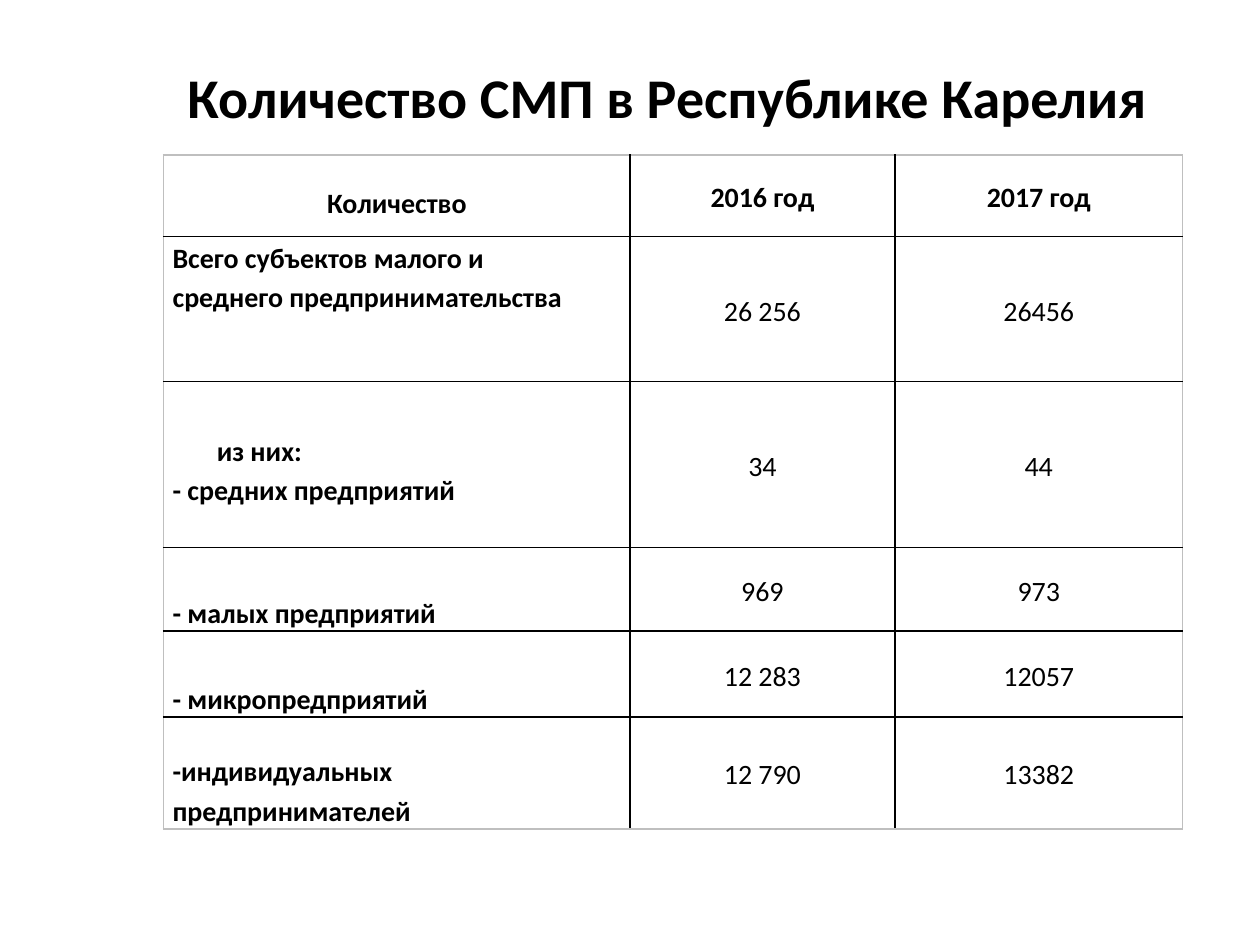
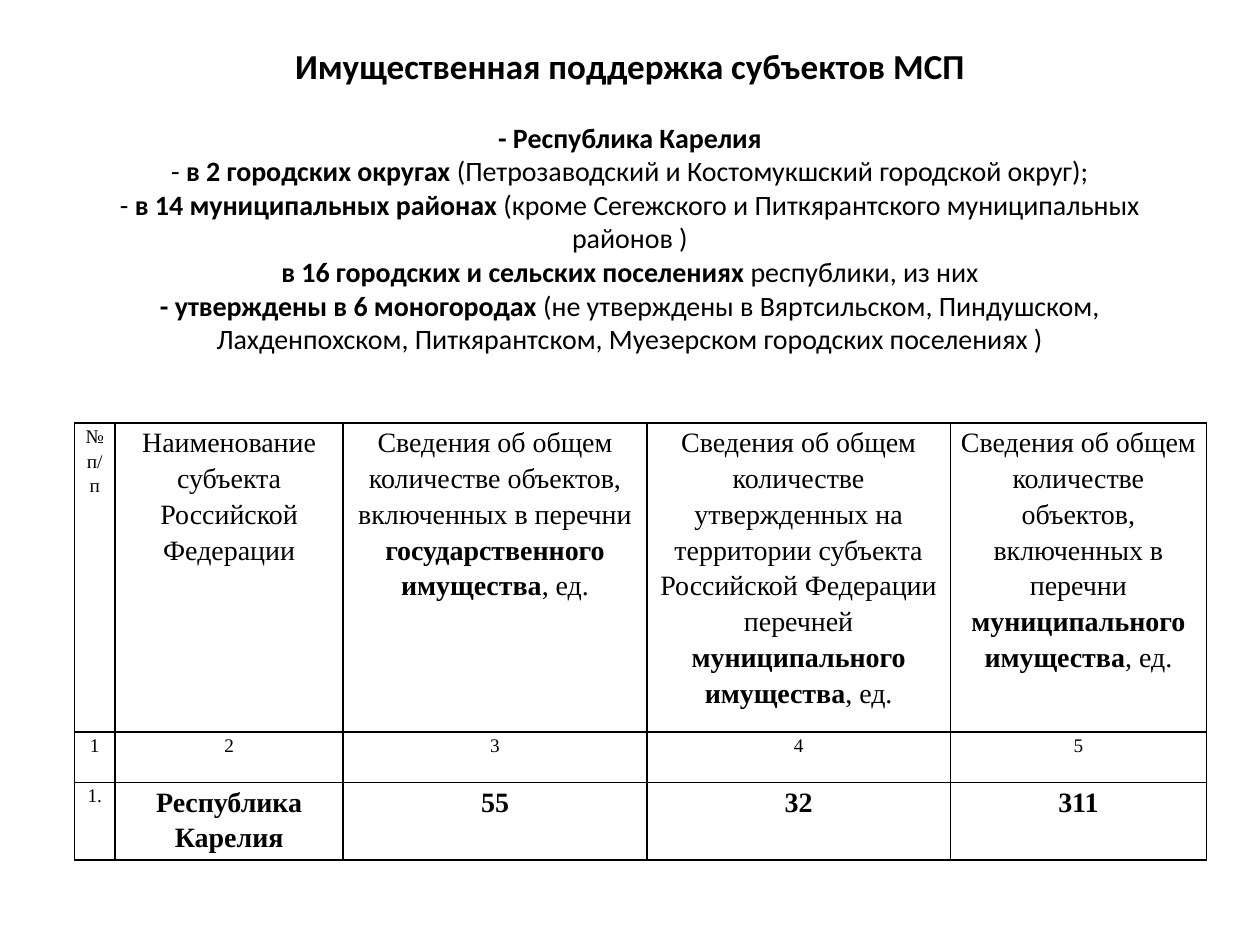
from lxml.etree import SubElement
from pptx import Presentation
from pptx.dml.color import RGBColor
from pptx.enum.text import MSO_ANCHOR as Anchor, PP_ALIGN as Align
from pptx.oxml.ns import qn
from pptx.util import Cm, Pt

BLACK, GREY = "000000", "BFBFBF"
SANS, SERIF = "Calibri", "Times New Roman"
PAD = 0.18

ENTERPRISES = [
    ("Количество", "2016 год", "2017 год"),
    ("Всего субъектов малого и\nсреднего предпринимательства", "26 256", "26456"),
    ("из них:\n- средних предприятий", "34", "44"),
    ("- малых предприятий", "969", "973"),
    ("- микропредприятий", "12 283", "12057"),
    ("-индивидуальных предпринимателей", "12 790", "13382"),
]

SUPPORT = """*- Республика Карелия*
- *в 2 городских округах* (Петрозаводский и Костомукшский городской округ);
- *в 14 муниципальных районах* (кроме Сегежского и Питкярантского муниципальных районов )
*в 16 городских и сельских поселениях* республики, из них
*- утверждены в 6 моногородах* (не утверждены в Вяртсильском, Пиндушском, \
Лахденпохском, Питкярантском, Муезерском городских поселениях )"""

PROPERTY = [
    ("№ п/п",
     "Наименование субъекта Российской Федерации",
     "Сведения об общем количестве объектов, включенных в перечни "
     "*государственного имущества*, ед.",
     "Сведения об общем количестве утвержденных на территории субъекта "
     "Российской Федерации перечней *муниципального имущества*, ед.",
     "Сведения об общем количестве объектов, включенных в перечни "
     "*муниципального имущества*, ед."),
    ("1", "2", "3", "4", "5"),
    ("1.", "*Республика Карелия*", "*55*", "*32*", "*311*"),
]


def color(value):
    return RGBColor.from_string(value)


def write(tf, text, size=16, font=SANS, bold=False, align=Align.CENTER, spacing=1, before=0):
    for i, line in enumerate(text.split("\n")):
        p = tf.paragraphs[0] if not tf.text else tf.add_paragraph()
        p.alignment, p.line_spacing = align, spacing
        p.space_before = Pt(0 if i else before)
        for j, part in enumerate(line.split("*")):
            if part:
                r = p.add_run()
                r.text = part
                r.font.name, r.font.size = font, Pt(size)
                r.font.bold = bold or j % 2 == 1
                r.font.color.rgb = color(BLACK)


def add_title(s, box, text, size):
    tf = s.shapes.add_textbox(*map(Cm, box)).text_frame
    tf.word_wrap = True
    tf.vertical_anchor = Anchor.MIDDLE
    write(tf, text, size, bold=True)
    return tf


def set_borders(cell, edges):
    tc_pr = cell._tc.get_or_add_tcPr()
    for side, value in zip("LRTB", edges):
        ln = SubElement(tc_pr, qn(f"a:ln{side}"), w=str(Pt(1)))
        fill = SubElement(ln, qn("a:solidFill"))
        SubElement(fill, qn("a:srgbClr"), val=value)


def add_grid(s, left, top, widths, heights, frame=BLACK):
    rows, cols = len(heights), len(widths)
    box = map(Cm, (left, top, sum(widths), sum(heights)))
    table = s.shapes.add_table(rows, cols, *box).table
    table.first_row = table.horz_banding = False
    for column, width in zip(table.columns, widths):
        column.width = Cm(width)
    for row, height in zip(table.rows, heights):
        row.height = Cm(height)
    for i in range(rows):
        for j in range(cols):
            cell = table.cell(i, j)
            outer = (j == 0, j == cols - 1, i == 0, i == rows - 1)
            set_borders(cell, [frame if edge else BLACK for edge in outer])
            cell.fill.background()
            cell.margin_left = cell.margin_right = Cm(PAD)
            cell.margin_top = cell.margin_bottom = 0
    return table


def enterprises_slide(s):
    add_title(s, (1.63, 1.12, 23.65, 1.63), "Количество СМП в Республике Карелия", 32)
    heights = (1.65, 2.92, 3.35, 1.68, 1.73, 2.26)
    table = add_grid(s, 3.3, 3.12, (9.4, 5.34, 5.8), heights, frame=GREY)
    for i, row in enumerate(ENTERPRISES):
        for j, text in enumerate(row):
            cell = table.cell(i, j)
            header, label = i == 0, j == 0
            cell.vertical_anchor = Anchor.BOTTOM if label and not header else Anchor.MIDDLE
            write(cell.text_frame, text, bold=header or label,
                  align=Align.LEFT if label and not header else Align.CENTER,
                  spacing=1.5 if header and label else 1.15)
    table.cell(1, 0).vertical_anchor = Anchor.TOP
    medium = table.cell(2, 0)
    medium.margin_bottom = Cm(0.79)
    p_pr = medium.text_frame.paragraphs[0]._p.get_or_add_pPr()
    p_pr.set("marL", "0")
    p_pr.set("indent", str(Cm(0.89)))


def property_slide(s):
    tf = add_title(s, (1.27, 0.76, 22.86, 6.55), "Имущественная поддержка субъектов МСП", 20)
    write(tf, SUPPORT, before=19)
    table = add_grid(s, 1.5, 8.53, (0.82, 4.6, 6.12, 6.12, 5.16), (5.77, 1.02, 1.45))
    for i, row in enumerate(PROPERTY):
        for j, text in enumerate(row):
            size = 11 if i == 1 or j == 0 else 16
            write(table.cell(i, j).text_frame, text, size, SERIF, spacing=1.15)


def main():
    prs = Presentation()
    prs.slide_width, prs.slide_height = Cm(25.4), Cm(19.05)
    for build in (enterprises_slide, property_slide):
        build(prs.slides.add_slide(prs.slide_layouts[6]))
    prs.save("out.pptx")


if __name__ == "__main__":
    main()
